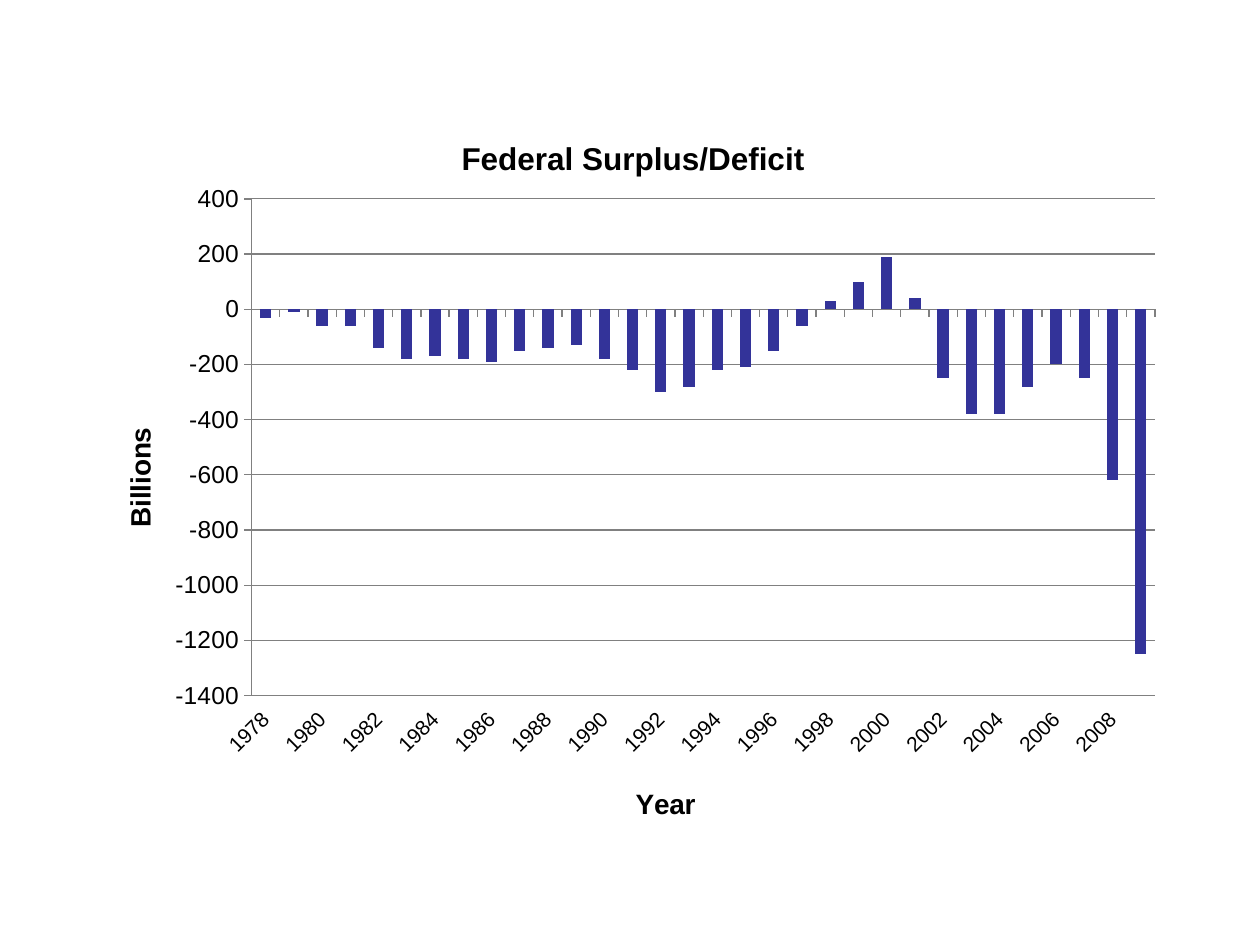
from dataclasses import dataclass

from lxml.etree import SubElement
from pptx import Presentation
from pptx.chart.data import CategoryChartData
from pptx.dml.color import RGBColor
from pptx.enum.chart import XL_CHART_TYPE, XL_TICK_LABEL_POSITION, XL_TICK_MARK
from pptx.oxml import parse_xml
from pptx.oxml.ns import nsdecls, qn
from pptx.util import Inches, Pt

FONT = "Arial"
BLACK = "000000"
GRAY = "808080"
INDIGO = "333399"
FIRST_YEAR = 1978
BALANCES = (
    -30, -10, -60, -60, -140, -180, -170, -180, -190, -150, -140,
    -130, -180, -220, -300, -280, -220, -210, -150, -60, 30, 100,
    190, 40, -250, -380, -380, -280, -200, -250, -620, -1250,
)


@dataclass
class Heading:
    text: str
    size: int
    x: float
    y: float
    rotation: int = 0


TITLE = Heading("Federal Surplus/Deficit", 18, 0.34, 0.05)
YEAR = Heading("Year", 16, 0.5, 0.92)
BILLIONS = Heading("Billions", 16, 0.03, 0.44, -90)


def rgb(color: str) -> RGBColor:
    return RGBColor.from_string(color)


def style_font(font, size: int, bold: bool = False) -> None:
    font.name = FONT
    font.size = Pt(size)
    font.bold = bold
    font.color.rgb = rgb(BLACK)


def rotate_text(body, degrees: int) -> None:
    body.set("rot", str(degrees * 60000))
    body.set("vert", "horz")


def place(element, index: int, **settings: str | float) -> None:
    for old in element.findall(qn("c:layout")):
        element.remove(old)
    layout = parse_xml(f"<c:layout {nsdecls('c')}/>")
    manual = SubElement(layout, qn("c:manualLayout"))
    for name, value in settings.items():
        SubElement(manual, qn(f"c:{name}")).set("val", str(value))
    element.insert(index, layout)


def add_heading(owner, title, heading: Heading) -> None:
    frame = title.text_frame
    frame.text = heading.text
    style_font(frame.paragraphs[0].font, heading.size, True)
    body = frame._txBody.find(qn("a:bodyPr"))
    rotate_text(body, heading.rotation)
    place(title._element, 1, xMode="edge", yMode="edge", x=heading.x, y=heading.y)


def style_axis(axis, size: int, heading: Heading) -> None:
    axis.major_tick_mark = XL_TICK_MARK.OUTSIDE
    axis.minor_tick_mark = XL_TICK_MARK.NONE
    axis.format.line.color.rgb = rgb(GRAY)
    style_font(axis.tick_labels.font, size)
    add_heading(axis, axis.axis_title, heading)


def add_balance_chart(page) -> None:
    data = CategoryChartData()
    data.categories = [str(FIRST_YEAR + step) for step in range(len(BALANCES))]
    data.add_series("Series 1", BALANCES)
    chart = page.shapes.add_chart(
        XL_CHART_TYPE.COLUMN_CLUSTERED,
        Inches(0.67), Inches(0.75), Inches(8.67), Inches(5.92), data,
    ).chart
    style_font(chart.font, 10)
    chart.has_legend = False
    add_heading(chart, chart.chart_title, TITLE)

    plot = chart.plots[0]
    plot.gap_width = 150
    plot.vary_by_categories = False
    series = plot.series[0]
    series.invert_if_negative = False
    series.format.fill.solid()
    series.format.fill.fore_color.rgb = rgb(INDIGO)

    years = chart.category_axis
    style_axis(years, 12, YEAR)
    years.tick_label_position = XL_TICK_LABEL_POSITION.LOW
    rotate_text(years._element.find(qn("c:txPr")).find(qn("a:bodyPr")), -45)
    skip = parse_xml(f'<c:tickLblSkip {nsdecls("c")} val="2"/>')
    years._element.find(qn("c:noMultiLvlLbl")).addprevious(skip)

    amounts = chart.value_axis
    style_axis(amounts, 14, BILLIONS)
    amounts.minimum_scale = -1400
    amounts.maximum_scale = 400
    amounts.major_unit = 200
    amounts.has_major_gridlines = True
    amounts.major_gridlines.format.line.color.rgb = rgb(GRAY)
    amounts.tick_labels.number_format = "0"
    amounts.tick_labels.number_format_is_linked = False

    area = chart._chartSpace.chart.plotArea
    place(
        area, 0, layoutTarget="inner", xMode="edge", yMode="edge",
        x=0.153, y=0.14, w=0.827, h=0.666,
    )


def main() -> None:
    deck = Presentation()
    deck.slide_width = Inches(10)
    deck.slide_height = Inches(7.5)
    page = deck.slides.add_slide(deck.slide_layouts[6])
    add_balance_chart(page)
    deck.save("out.pptx")


if __name__ == "__main__":
    main()
